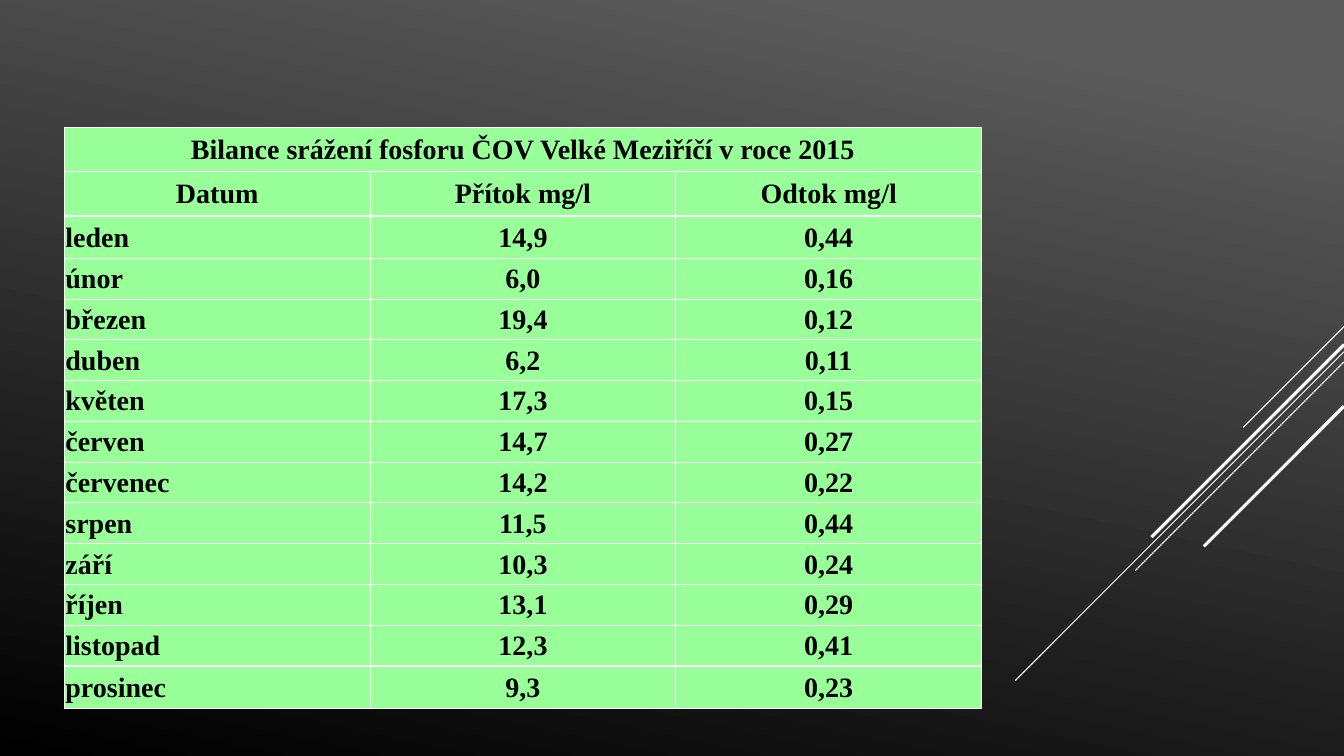
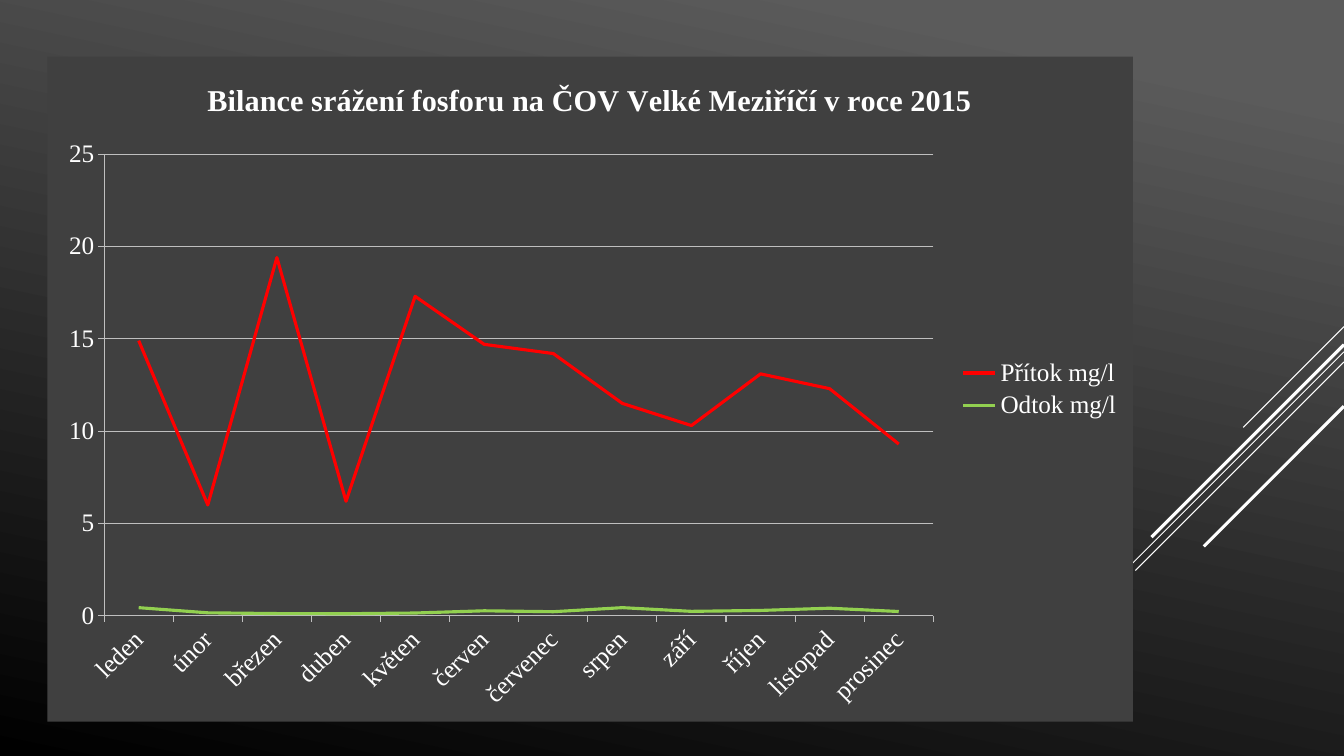
from lxml import etree
from pptx import Presentation
from pptx.chart.data import CategoryChartData
from pptx.dml.color import RGBColor
from pptx.enum import chart as ch, shapes, text
from pptx.oxml import parse_xml
from pptx.oxml.ns import nsdecls, qn
from pptx.util import Pt

WHITE, GREEN, GREY = "FFFFFF", "99FF99", "404040"
FACE = "Times New Roman"
HEADS = ["Datum", "Přítok mg/l", "Odtok mg/l"]
DATA = [
    ("leden", 14.9, 0.44), ("únor", 6.0, 0.16), ("březen", 19.4, 0.12),
    ("duben", 6.2, 0.11), ("květen", 17.3, 0.15), ("červen", 14.7, 0.27),
    ("červenec", 14.2, 0.22), ("srpen", 11.5, 0.44), ("září", 10.3, 0.24),
    ("říjen", 13.1, 0.29), ("listopad", 12.3, 0.41), ("prosinec", 9.3, 0.23),
]
RAYS = [(233.3, 72, 0.75), (251.3, 234.7, 0.75), (258.5, 149, 0.75),
        (246.2, 137.5, 2.25), (290.2, 100.1, 2.25)]


def tint(color, code):
    color.rgb = RGBColor.from_string(code)


def style(font, size, code, bold=False):
    font.name, font.size, font.bold = FACE, Pt(size), bold
    tint(font.color, code)


prs = Presentation()
prs.slide_width, prs.slide_height = Pt(960), Pt(540)

fill = prs.slide_master.background.fill
fill.gradient()
fill.gradient_angle = 258
for stop, (pos, code) in zip(fill.gradient_stops, [(0.1, "5B5B5B"), (1, "000000")]):
    stop.position = pos
    tint(stop.color, code)

pages = [prs.slides.add_slide(prs.slide_layouts[6]) for _ in range(2)]
for page in pages:
    for top, run, width in RAYS:
        ray = page.shapes.add_connector(
            shapes.MSO_CONNECTOR.STRAIGHT, Pt(960), Pt(top), Pt(960 - run), Pt(top + run))
        tint(ray.line.color, WHITE)
        ray.line.width = Pt(width)
        etree.SubElement(ray._element.spPr, qn("a:effectLst"))

rows = [["Bilance srážení fosforu ČOV Velké Meziříčí v roce 2015", "", ""], HEADS]
for month, inflow, outflow in DATA:
    rows.append([month, f"{inflow:.1f}".replace(".", ","), f"{outflow:.2f}".replace(".", ",")])
highs = [31.6, 31.6, 30.2] + [29.12] * 10 + [30.2]

table = pages[0].shapes.add_table(
    len(rows), 3, Pt(46), Pt(91.2), Pt(655.2), Pt(sum(highs))).table
table.first_row = table.horz_banding = False
for col in table.columns:
    col.width = Pt(218.4)
table.cell(0, 0).merge(table.cell(0, 2))
for r, row in enumerate(rows):
    table.rows[r].height = Pt(highs[r])
    for c, words in enumerate(row):
        cell = table.cell(r, c)
        cell.margin_left = cell.margin_right = cell.margin_top = Pt(0.7)
        cell.margin_bottom = 0
        cell.vertical_anchor = text.MSO_ANCHOR.MIDDLE
        props = cell._tc.get_or_add_tcPr()
        for side in ("lnL", "lnR", "lnT", "lnB"):
            props.append(parse_xml(
                f'<a:{side} {nsdecls("a")} w="12700"><a:solidFill>'
                f'<a:srgbClr val="{WHITE}"/></a:solidFill></a:{side}>'))
        cell.fill.solid()
        tint(cell.fill.fore_color, GREEN)
        para = cell.text_frame.paragraphs[0]
        para.text = words
        style(para.font, 20, "000000", True)
        left = r > 1 and c == 0
        para.alignment = text.PP_ALIGN.LEFT if left else text.PP_ALIGN.CENTER

months, *flows = zip(*DATA)
data = CategoryChartData()
data.categories = months
for name, vals in zip(HEADS[1:], flows):
    data.add_series(name, vals)
chart = pages[1].shapes.add_chart(
    ch.XL_CHART_TYPE.LINE, Pt(33.8), Pt(40.5), Pt(775.4), Pt(475), data).chart
style(chart.font, 18, WHITE)
chart.element.find(qn("c:txPr")).addprevious(parse_xml(
    f'<c:spPr {nsdecls("c", "a")}><a:solidFill><a:srgbClr val="{GREY}"/></a:solidFill>'
    '<a:ln><a:noFill/></a:ln></c:spPr>'))

chart.has_title = True
head = chart.chart_title.text_frame.paragraphs[0]
head.text = "Bilance srážení fosforu na ČOV Velké Meziříčí v roce 2015"
style(head.font, 21.6, WHITE, True)
chart.has_legend = True
chart.legend.position = ch.XL_LEGEND_POSITION.RIGHT
chart.legend.include_in_layout = False

chart.plots[0].vary_by_categories = False
for line, code in zip(chart.plots[0].series, ["FF0000", "92D050"]):
    line.smooth = False
    line.format.line.width = Pt(2.25)
    tint(line.format.line.color, code)
    line.marker.style = ch.XL_MARKER_STYLE.NONE

months_axis, flow_axis = chart.category_axis, chart.value_axis
flow_axis.minimum_scale, flow_axis.maximum_scale, flow_axis.major_unit = 0, 25, 5
flow_axis.has_major_gridlines = True
for axis in (months_axis, flow_axis):
    axis.major_tick_mark = ch.XL_TICK_MARK.OUTSIDE
    style(axis.tick_labels.font, 18, WHITE)
for part in (months_axis, flow_axis, flow_axis.major_gridlines):
    part.format.line.width = Pt(0.75)
    tint(part.format.line.color, "BFBFBF")
months_axis._element.find(qn("c:txPr")).find(qn("a:bodyPr")).set("rot", "-2700000")

prs.save("out.pptx")
